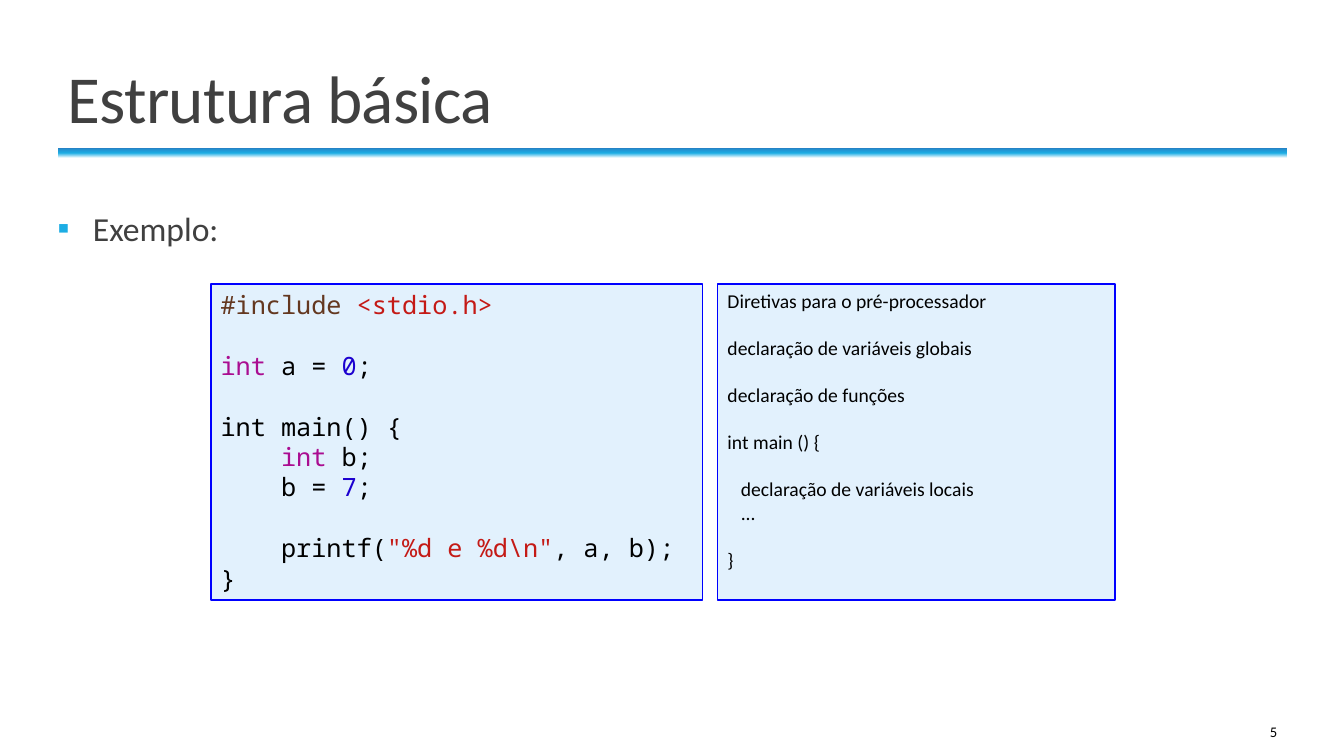
from copy import deepcopy

from lxml import etree
from pptx import Presentation
from pptx.dml.color import RGBColor
from pptx.enum import shapes, text
from pptx.oxml import ns
from pptx.util import Pt

WHITE = RGBColor(0xFF, 0xFF, 0xFF)
BLACK = RGBColor(0x00, 0x00, 0x00)
GRAY = RGBColor(0x40, 0x40, 0x40)
SKY = RGBColor(0x1C, 0xAD, 0xE4)
STEEL = RGBColor(0x26, 0x83, 0xC6)
PALE = RGBColor(0xE2, 0xF1, 0xFD)
BORDER = RGBColor(0x00, 0x00, 0xFF)
BROWN = RGBColor(0x64, 0x38, 0x20)
RED = RGBColor(0xC4, 0x1A, 0x16)
PURPLE = RGBColor(0xAA, 0x0D, 0x91)
BLUE = RGBColor(0x1C, 0x00, 0xCF)

LEFT, WIDTH = 41.15, 878.4
PANEL_TOP, PANEL_HEIGHT = 203, 225.4
CODE_INDENT, OUTLINE_INDENT = 43.2, 9.5

# Each line: (runs, indented, preceded by a gap)
CODE = [
    ([("#include ", BROWN), ("<stdio.h>", RED)], False, False),
    ([("int", PURPLE), (" a = ", BLACK), ("0", BLUE), (";", BLACK)], False, True),
    ([("int main() {", BLACK)], False, True),
    ([("int", PURPLE), (" b;", BLACK)], True, False),
    ([("b = ", BLACK), ("7", BLUE), (";", BLACK)], True, False),
    ([("printf(", BLACK), ('"%d e %d\\n"', RED), (", a, b);", BLACK)], True, True),
    ([("}", BLACK)], False, False),
]
OUTLINE = [
    ([("Diretivas para o pré-processador", BLACK)], False, False),
    ([("declaração de variáveis globais", BLACK)], False, True),
    ([("declaração de funções", BLACK)], False, True),
    ([("int main () {", BLACK)], False, True),
    ([("declaração de variáveis locais", BLACK)], True, True),
    ([("...", BLACK)], True, False),
    ([("}", BLACK)], False, True),
]


def write(paragraph, runs, *, size, font="Calibri", spacing=None, before=0,
          align=text.PP_ALIGN.LEFT, indent=0, tracking=None):
    """Fill a paragraph with coloured runs in one format."""
    paragraph.alignment = align
    paragraph.space_before = Pt(before)
    if spacing is not None:
        paragraph.line_spacing = spacing
    if indent:
        paragraph._p.get_or_add_pPr().set("marL", str(Pt(indent)))
    for words, color in runs:
        run = paragraph.add_run()
        run.text = words
        run.font.size = Pt(size)
        run.font.name = font
        run.font.color.rgb = color
        if tracking is not None:
            run._r.get_or_add_rPr().set("spc", str(round(tracking * 100)))


def add_text(slide, left, top, width, height, words, *, color, margin=7.2,
             anchor=text.MSO_ANCHOR.TOP, **style):
    """Add a wrapping one-paragraph text box and return its paragraph."""
    box = slide.shapes.add_textbox(Pt(left), Pt(top), Pt(width), Pt(height))
    frame = box.text_frame
    frame.word_wrap = True
    frame.vertical_anchor = anchor
    frame.margin_left = frame.margin_right = Pt(margin)
    write(frame.paragraphs[0], [(words, color)], **style)
    return frame.paragraphs[0]


def add_bullet(paragraph, symbol, color, hang):
    """Give a paragraph a coloured hanging bullet."""
    properties = paragraph._p.get_or_add_pPr()
    properties.set("marL", str(Pt(hang)))
    properties.set("indent", str(-Pt(hang)))
    bullet_color = etree.SubElement(properties, ns.qn("a:buClr"))
    etree.SubElement(bullet_color, ns.qn("a:srgbClr")).set("val", str(color))
    etree.SubElement(properties, ns.qn("a:buFont")).set("typeface", "Calibri")
    etree.SubElement(properties, ns.qn("a:buChar")).set("char", symbol)


def add_rectangle(slide, left, top, width, height):
    """Add a rectangle without shadow."""
    shape = slide.shapes.add_shape(shapes.MSO_SHAPE.RECTANGLE,
                                   Pt(left), Pt(top), Pt(width), Pt(height))
    shape.shadow.inherit = False
    return shape


def add_title_bar(slide):
    """Add the gradient bar below the title."""
    bar = add_rectangle(slide, LEFT, 105.8, WIDTH, 7.2)
    bar.line.fill.background()
    bar.fill.gradient()
    bar.fill.gradient_angle = 90
    stop_list = bar._element.spPr.find(".//" + ns.qn("a:gsLst"))
    stop_list.append(deepcopy(stop_list[0]))
    colors = (WHITE, SKY, STEEL)
    for index, (stop, color) in enumerate(zip(bar.fill.gradient_stops, colors)):
        stop.position = index / 2
        stop.color.rgb = color


def add_panel(slide, left, width, lines, *, pitch, indent, **style):
    """Add a bordered panel of text lines at a fixed pitch."""
    panel = add_rectangle(slide, left, PANEL_TOP, width, PANEL_HEIGHT)
    panel.fill.solid()
    panel.fill.fore_color.rgb = PALE
    panel.line.color.rgb = BORDER
    panel.line.width = Pt(1.25)
    frame = panel.text_frame
    frame.word_wrap = True
    frame.vertical_anchor = text.MSO_ANCHOR.TOP
    for index, (runs, indented, gap) in enumerate(lines):
        paragraph = frame.add_paragraph() if index else frame.paragraphs[0]
        write(paragraph, runs, spacing=Pt(pitch), before=pitch if gap else 0,
              indent=indent if indented else 0, **style)


def main():
    """Build the slide and save it."""
    presentation = Presentation()
    presentation.slide_width, presentation.slide_height = Pt(960), Pt(540)
    slide = presentation.slides.add_slide(presentation.slide_layouts[6])

    add_title_bar(slide)
    add_text(slide, 779.8, 508.3, 139.7, 28.8, "5", color=BLACK, size=10.5,
             anchor=text.MSO_ANCHOR.MIDDLE, align=text.PP_ALIGN.RIGHT)
    add_text(slide, LEFT, 20.9, WIDTH, 80.6, "Estrutura básica", color=GRAY,
             size=48, anchor=text.MSO_ANCHOR.BOTTOM, spacing=0.85, tracking=-0.5)
    example = add_text(slide, LEFT, 144.7, WIDTH, 347, "Exemplo:", color=GRAY,
                       size=24, margin=0)
    add_bullet(example, "▪", SKY, 25.2)
    add_panel(slide, 512.6, 283.7, OUTLINE, pitch=16.8, indent=OUTLINE_INDENT,
              size=14)
    add_panel(slide, 150.5, 351.4, CODE, pitch=21.7, indent=CODE_INDENT,
              size=18, font="Noto Sans Mono")

    presentation.save("out.pptx")


if __name__ == "__main__":
    main()
